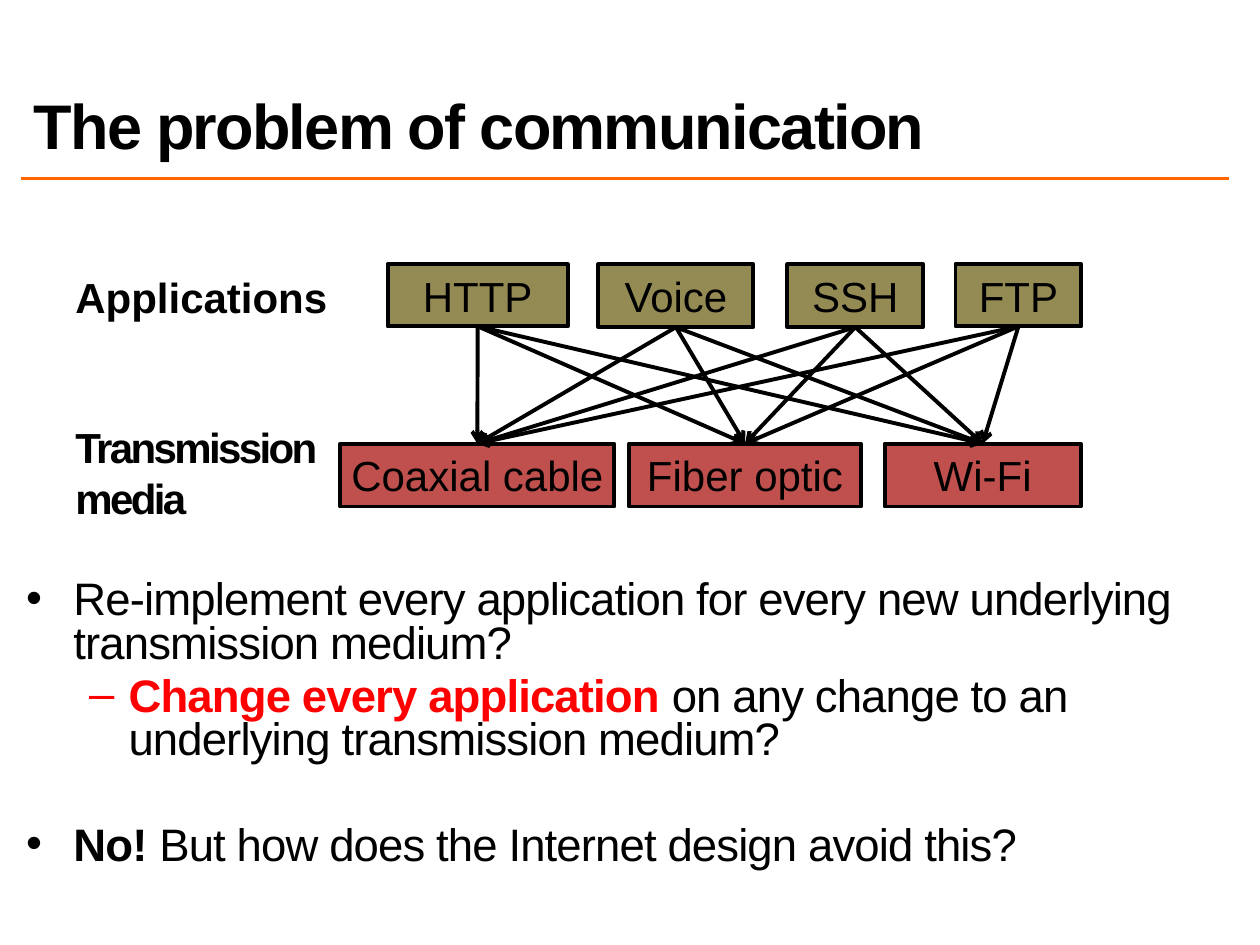
from itertools import product

from lxml.etree import SubElement
from pptx import Presentation
from pptx.dml.color import RGBColor
from pptx.enum.shapes import MSO_CONNECTOR as CONN, MSO_SHAPE as SHAPE
from pptx.enum.text import MSO_ANCHOR as ANCHOR, MSO_AUTO_SIZE as FIT, PP_ALIGN as ALIGN
from pptx.oxml.ns import qn
from pptx.util import Pt

BLACK = RGBColor(0, 0, 0)
ORANGE = RGBColor(0xFF, 0x66, 0x00)
RED = RGBColor(0xFF, 0, 0)
OLIVE = RGBColor(0x94, 0x8A, 0x54)
BRICK = RGBColor(0xC0, 0x50, 0x4D)

TITLE = {"size": Pt(36), "bold": True}
LABEL = {"size": Pt(24), "bold": True}
BOX = {"size": Pt(24), "bold": False}
BODY = {"size": Pt(26), "bold": False}
STRONG = {**BODY, "bold": True}

# Box rows: text, left, width, height
APPLICATIONS = [("HTTP", 221.5, 103, 35.5), ("Voice", 342, 88.5, 36),
                ("SSH", 450, 77.5, 36), ("FTP", 546, 72, 35.5)]
MEDIA = [("Coaxial cable", 194.5, 156.5, 36), ("Fiber optic", 359.5, 132.5, 36),
         ("Wi-Fi", 505.5, 112, 36)]
# Bullets: mark, left indent, hanging indent, space before, runs
BULLETS = [
    ("•", 27, 27, 5.2, [("Re-implement every application for every new underlying "
                         "transmission medium?", STRONG | BODY, BLACK)]),
    ("–", 58.5, 22.5, 5.2, [("Change every application ", STRONG, RED),
                            ("on any change to an underlying transmission medium?", BODY, BLACK)]),
    ("•", 27, 27, 35.5, [("No!", STRONG, BLACK),
                         (" But how does the Internet design avoid this?", BODY, BLACK)]),
]


def set_all(obj, values):
    for name, value in values.items():
        setattr(obj, name, value)


def add_run(p, text, fmt, color=BLACK, spacing=0):
    r = p.add_run()
    r.text = text
    set_all(r.font, {"name": "Arial", **fmt})
    r.font.color.rgb = color
    if spacing:
        r._r.get_or_add_rPr().set("spc", str(round(spacing * 100)))


def add_title(slide, text):
    sp = slide.shapes.title
    set_all(sp, {"left": Pt(12), "top": Pt(12), "width": Pt(690), "height": Pt(84)})
    tf = sp.text_frame
    set_all(tf, {"vertical_anchor": ANCHOR.BOTTOM, "word_wrap": True, "auto_size": FIT.NONE})
    p = tf.paragraphs[0]
    set_all(p, {"alignment": ALIGN.LEFT, "line_spacing": 0.8})
    add_run(p, text, TITLE, spacing=-1)


def add_label(slide, lines, top, width, height, spacing=0):
    tf = slide.shapes.add_textbox(Pt(36), Pt(top), Pt(width), Pt(height)).text_frame
    tf.word_wrap = False
    for i, line in enumerate(lines):
        p = tf.add_paragraph() if i else tf.paragraphs[0]
        add_run(p, line, LABEL, spacing=spacing)


def add_box(slide, text, left, top, width, height, color):
    sp = slide.shapes.add_shape(SHAPE.RECTANGLE, Pt(left), Pt(top), Pt(width), Pt(height))
    sp.shadow.inherit = False
    sp.fill.solid()
    sp.fill.fore_color.rgb = color
    sp.line.color.rgb = BLACK
    sp.line.width = Pt(2.25)
    tf = sp.text_frame
    set_all(tf, {"vertical_anchor": ANCHOR.MIDDLE, "word_wrap": False})
    p = tf.paragraphs[0]
    p.alignment = ALIGN.CENTER
    add_run(p, text, BOX)
    return sp


def add_line(slide, start, end, color, width):
    cx = slide.shapes.add_connector(CONN.STRAIGHT, *map(Pt, start + end))
    cx.line.color.rgb = color
    cx.line.width = Pt(width)
    SubElement(cx._element.spPr, qn("a:effectLst"))
    return cx


def add_arrow(slide, upper, lower):
    cx = add_line(slide, (0, 0), (0, 0), BLACK, 2.25)
    cx.begin_connect(upper, 2)  # bottom centre
    cx.end_connect(lower, 0)  # top centre
    SubElement(cx.line._get_or_add_ln(), qn("a:tailEnd"), type="arrow")


def add_bullets(slide, bullets):
    tf = slide.shapes.add_textbox(Pt(12), Pt(329), Pt(690), Pt(176.5)).text_frame
    sides = ("left", "top", "right", "bottom")
    set_all(tf, {"word_wrap": True, **{f"margin_{side}": Pt(3) for side in sides}})
    for i, (mark, left, hang, before, runs) in enumerate(bullets):
        p = tf.add_paragraph() if i else tf.paragraphs[0]
        set_all(p, {"line_spacing": 0.8, "space_before": Pt(before)})
        pPr = p._p.get_or_add_pPr()
        pPr.set("marL", str(Pt(left)))
        pPr.set("indent", str(-Pt(hang)))
        SubElement(pPr, qn("a:buFont"), typeface="Arial")
        SubElement(pPr, qn("a:buChar"), char=mark)
        for text, fmt, color in runs:
            add_run(p, text, fmt, color, spacing=-0.5)


def main():
    prs = Presentation()
    set_all(prs, {"slide_width": Pt(720), "slide_height": Pt(540)})
    slide = prs.slides.add_slide(prs.slide_layouts[5])

    # Title and rule
    add_line(slide, (12, 102), (702, 102), ORANGE, 2)
    add_title(slide, "The problem of communication")

    # Bullets
    add_bullets(slide, BULLETS)

    # Row labels
    add_label(slide, ["Applications"], 151.5, 160, 36)
    add_label(slide, ["Transmission", "media"], 237.5, 157.5, 65.5, spacing=-1.5)

    # Every application linked to every medium
    apps = [add_box(slide, text, left, 151, width, height, OLIVE)
            for text, left, width, height in APPLICATIONS]
    media = [add_box(slide, text, left, 253.5, width, height, BRICK)
             for text, left, width, height in MEDIA]
    for app, medium in product(apps, media):
        add_arrow(slide, app, medium)

    prs.save("out.pptx")


if __name__ == "__main__":
    main()
